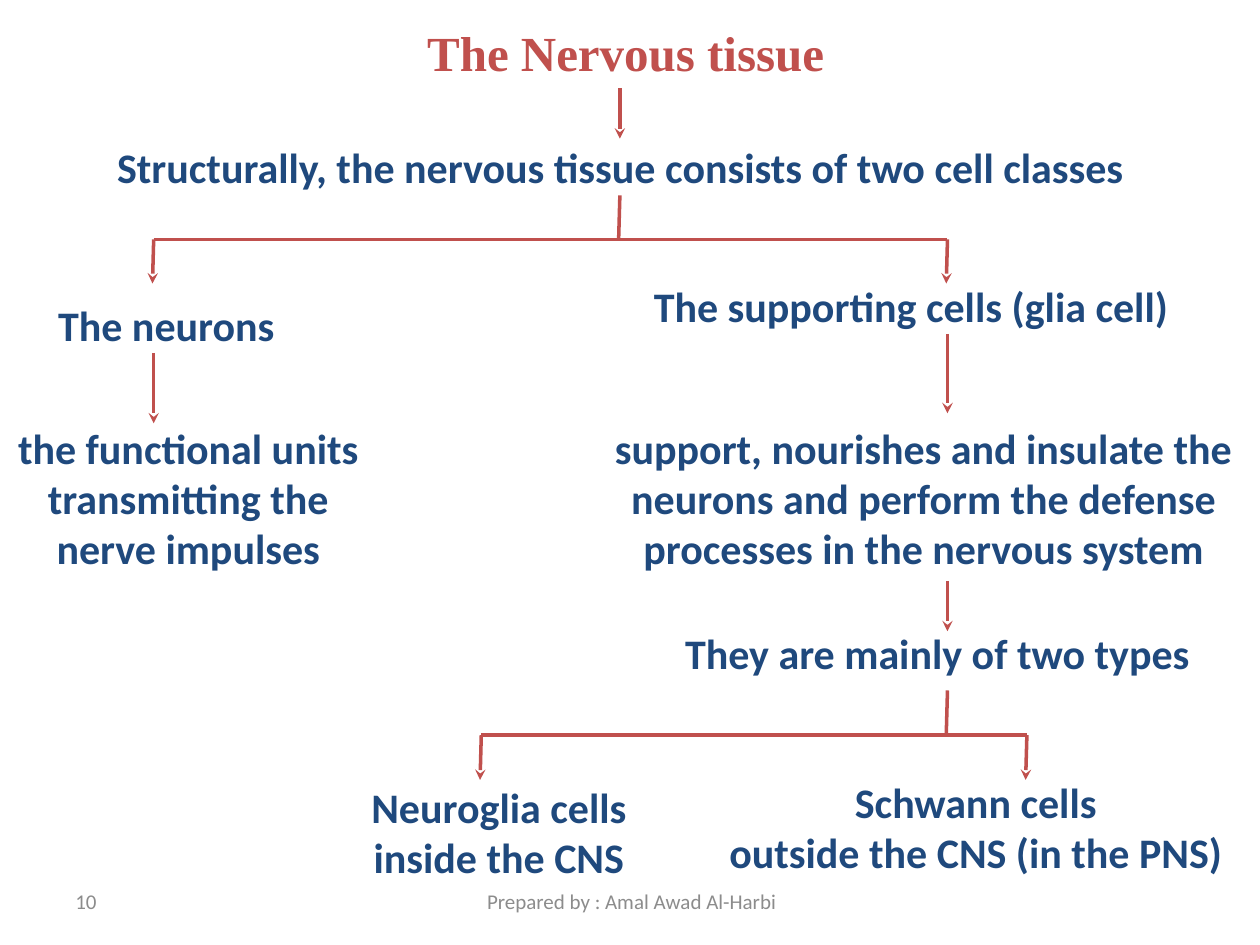
from lxml import etree
from pptx import Presentation
from pptx.dml.color import RGBColor
from pptx.enum.shapes import MSO_CONNECTOR
from pptx.enum.text import MSO_ANCHOR, PP_ALIGN
from pptx.oxml.ns import qn
from pptx.util import Inches, Pt

STRAIGHT = MSO_CONNECTOR.STRAIGHT
TOP, MIDDLE = MSO_ANCHOR.TOP, MSO_ANCHOR.MIDDLE
LEFT, CENTER = PP_ALIGN.LEFT, PP_ALIGN.CENTER

# Grid: 100 columns by 75 rows on a 10 x 7.5 inch slide
COLS, ROWS = 100, 75
CELL = Inches(0.1)
RED, BLUE, GREY = "C0504D", "1F497D", "8C8C8C"

TITLE = dict(name="Times New Roman", size=Pt(28), bold=True)
LABEL = dict(name="Calibri", size=Pt(24), bold=True)
SMALL = dict(name="Calibri", size=Pt(12), bold=False)


def rgb(value):
    return RGBColor.from_string(value)


def grid(*cells):
    return [round(c * CELL) for c in cells]


def write(sp, lines, style, color, anchor=TOP, align=CENTER, wrap=True):
    tf = sp.text_frame
    tf.word_wrap, tf.vertical_anchor = wrap, anchor
    for i, line in enumerate(lines):
        p = tf.paragraphs[0] if i == 0 else tf.add_paragraph()
        p.alignment = align
        r = p.add_run()
        r.text = line
        for key, value in style.items():
            setattr(r.font, key, value)
        r.font.color.rgb = rgb(color)


def add_title(s, box, text):
    sp = s.shapes.title
    sp.left, sp.top, sp.width, sp.height = grid(*box)
    write(sp, [text], TITLE, RED, MIDDLE, wrap=False)


def add_text(s, box, lines, style=LABEL, color=BLUE, **layout):
    write(s.shapes.add_textbox(*grid(*box)), lines, style, color, **layout)


def add_line(s, x1, y1, x2, y2, arrow=False):
    line = s.shapes.add_connector(STRAIGHT, *grid(x1, y1, x2, y2))
    line.line.color.rgb = rgb(RED)
    line.line.width = Pt(2)
    if arrow:
        ln = line.line._get_or_add_ln()
        etree.SubElement(ln, qn("a:tailEnd"), type="stealth")
    etree.SubElement(line._element.spPr, qn("a:effectLst"))


def add_fork(s, box, stem):
    """Stem from the top of the box, bar at half height, arrow at each end."""
    x, y, w, h = box
    bar = y + h / 2
    add_line(s, stem, y, stem - 0.1, bar)
    add_line(s, x, bar, x + w, bar)
    for end in (x, x + w):
        add_line(s, end, bar, end - 0.1, y + h, arrow=True)


def add_footer(s, box, number, credit):
    x, y, w, h = box
    layout = dict(style=SMALL, color=GREY, anchor=MIDDLE)
    add_text(s, (x, y, 0.38 * w, h), [number], align=LEFT, **layout)
    add_text(s, (x + 0.48 * w, y, 0.52 * w, h), [credit], **layout)


# Labels of the tree: box on the grid, lines
LABELS = [
    ((7.5, 10.7, 83.5, 5.1),
     ["Structurally, the nervous tissue consists of two cell classes"]),
    ((3.5, 23.3, 19.4, 5), ["The neurons"]),
    ((-0.4, 33, 30.7, 13.1),
     ["the functional units transmitting the nerve impulses"]),
    ((50.7, 21.8, 43.2, 5.1), ["The supporting cells (glia cell)"]),
    ((46.9, 33, 52.8, 13.1),
     ["support, nourishes and insulate the neurons and perform "
      "the defense processes in the nervous system"]),
    ((53.2, 49.3, 42.4, 5.1), ["They are mainly of two types"]),
    ((28, 61.5, 23.2, 9.1), ["Neuroglia cells", "inside the CNS"]),
    ((56.3, 61.1, 42.3, 9.1),
     ["Schwann cells", "outside the CNS (in the PNS)"]),
]

# Columns of the tree's trunk and of its two branches
TRUNK, NEURONS, GLIA = 49.2, 12.2, 75.2
ARROWS = [(TRUNK, 7, 11), (NEURONS, 28, 33.6),
          (GLIA, 26.5, 32.8), (GLIA, 46.1, 50.1)]
FORKS = [((NEURONS, 15.5, GLIA - NEURONS, 7), TRUNK),
         ((38.2, 54.8, 43.3, 7.1), GLIA)]


def main():
    prs = Presentation()
    prs.slide_width, prs.slide_height = grid(COLS, ROWS)
    s = prs.slides.add_slide(prs.slide_layouts[5])

    # Title and labels
    add_title(s, (32.7, 1.3, 33.9, 5.7), "The Nervous tissue")
    for box, lines in LABELS:
        add_text(s, box, lines, wrap=len(lines) == 1)

    # Arrows and forks
    for x, top, bottom in ARROWS:
        add_line(s, x, top, x, bottom, arrow=True)
    for box, stem in FORKS:
        add_fork(s, box, stem)

    # Footer
    add_footer(s, (5, 69.5, 61, 4), "10", "Prepared by : Amal Awad Al-Harbi")
    prs.save("out.pptx")


if __name__ == "__main__":
    main()
